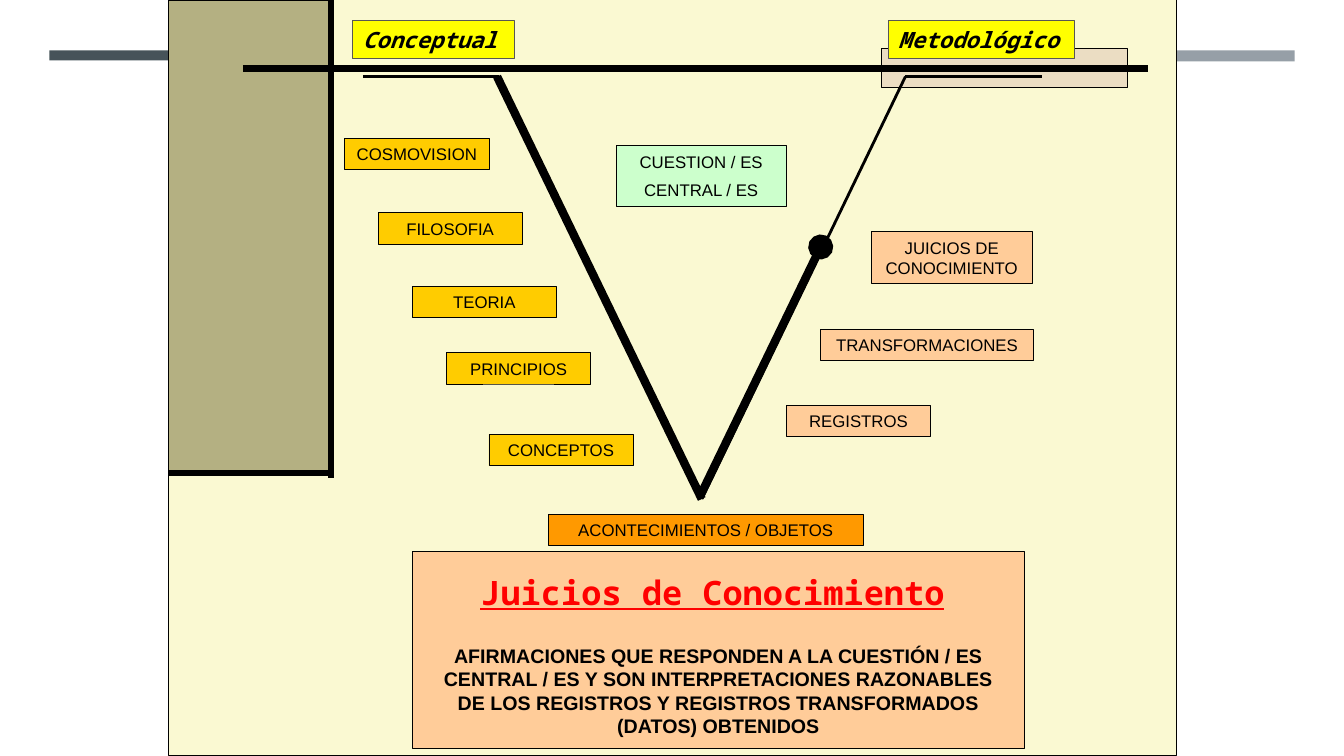
import pptx
import pptx.util
import pptx.dml.color
import pptx.enum.shapes
import pptx.enum.text
import pptx.oxml.ns
from dataclasses import dataclass
from lxml import etree

Inches = pptx.util.Inches
Pt = pptx.util.Pt
CENTER = pptx.enum.text.PP_ALIGN.CENTER
LEFT = pptx.enum.text.PP_ALIGN.LEFT
qn = pptx.oxml.ns.qn


@dataclass(frozen=True)
class Theme:
    black: str = "000000"
    slate: str = "465359"
    steel: str = "969FA7"
    cream: str = "FAF9D2"
    olive: str = "B4B082"
    sand: str = "EBDDC3"
    yellow: str = "FFFF00"
    heading_line: str = "585753"
    gold: str = "FFCC00"
    orange: str = "FF9900"
    peach: str = "FFCC99"
    mint: str = "CCFFCC"
    red: str = "FF0000"
    sans: str = "Arial"
    mono: str = "Noto Sans Mono"
    label_size: int = 12
    statement_size: int = 14
    heading_size: int = 16
    title_size: int = 24


theme = Theme()
rgb = pptx.dml.color.RGBColor.from_string

deck = pptx.Presentation()
deck.slide_width = Inches(13.33)
deck.slide_height = Inches(7.5)
slide = deck.slides.add_slide(deck.slide_layouts[6])


def add_box(left, top, width, height, fill, line=None, line_width=0.5, text="",
            size=theme.label_size, font=theme.sans, align=CENTER):
    """Add a filled rectangle; each line of text becomes a paragraph."""
    box = slide.shapes.add_shape(pptx.enum.shapes.MSO_SHAPE.RECTANGLE, Inches(left),
                                 Inches(top), Inches(width), Inches(height))
    box.shadow.inherit = False
    box.fill.solid()
    box.fill.fore_color.rgb = rgb(fill)
    if line:
        box.line.color.rgb = rgb(line)
        box.line.width = Pt(line_width)
    else:
        box.line.fill.background()
    if text:
        box.text_frame.text = text
        box.text_frame.word_wrap = True
        for index, paragraph in enumerate(box.text_frame.paragraphs):
            paragraph.alignment = align
            paragraph.space_before = Pt(size / 2 if index else 0)
            paragraph.font.size = Pt(size)
            paragraph.font.name = font
            paragraph.font.color.rgb = rgb(theme.black)
    return box


def add_line(x1, y1, x2, y2, width):
    line = slide.shapes.add_connector(pptx.enum.shapes.MSO_CONNECTOR.STRAIGHT, Inches(x1),
                                      Inches(y1), Inches(x2), Inches(y2))
    line.line.color.rgb = rgb(theme.black)
    line.line.width = Pt(width)
    etree.SubElement(line._element.spPr, qn("a:effectLst"))
    return line


# Backdrop
add_box(0.49, 0.5, 4.05, 0.1, theme.slate)
add_box(8.79, 0.5, 4.05, 0.11, theme.steel)
add_box(1.67, 0, 10, 7.5, theme.cream, theme.black, 0.75)
add_box(1.67, 0, 1.61, 4.69, theme.olive, theme.black, 0.75)
add_line(1.67, 4.69, 3.28, 4.69, 4.5)
add_box(8.74, 0.48, 2.44, 0.39, theme.sand, theme.black, 0.75)
add_line(2.41, 0.68, 11.39, 0.68, 4.5)
add_line(3.28, 4.74, 3.28, 0, 4.5)

# Headings of the two sides
for name, left, width in [("Conceptual", 3.5, 1.6), ("Metodológico", 8.81, 1.85)]:
    heading = add_box(left, 0.2, width, 0.38, theme.yellow, theme.heading_line, 0.75,
                      name, theme.heading_size, theme.mono, LEFT)
    heading_font = heading.text_frame.paragraphs[0].font
    heading_font.bold = True
    heading_font.italic = True

# Thin outline of the V
for x1, y1, x2, y2 in [(3.6, 0.76, 4.95, 0.76), (8.98, 0.76, 10.33, 0.76),
                       (4.93, 0.76, 6.96, 4.95), (8.98, 0.76, 6.96, 4.95)]:
    add_line(x1, y1, x2, y2, 2)

# Labels around the V
labels = [
    ("COSMOVISION", 3.42, 1.37, 1.43, 0.31, theme.gold),
    ("FILOSOFIA", 3.75, 2.11, 1.43, 0.31, theme.gold),
    ("TEORIA", 4.09, 2.84, 1.43, 0.31, theme.gold),
    ("PRINCIPIOS", 4.43, 3.5, 1.43, 0.31, theme.gold),
    ("CONCEPTOS", 4.85, 4.31, 1.43, 0.31, theme.gold),
    ("ACONTECIMIENTOS / OBJETOS", 5.44, 5.1, 3.12, 0.31, theme.orange),
    ("REGISTROS", 7.8, 4.02, 1.43, 0.31, theme.peach),
    ("TRANSFORMACIONES", 8.14, 3.27, 2.11, 0.31, theme.peach),
    ("JUICIOS DE CONOCIMIENTO", 8.64, 2.3, 1.6, 0.51, theme.peach),
    ("CUESTION / ES\nCENTRAL / ES", 6.11, 1.44, 1.69, 0.61, theme.mint),
]
for text, left, top, width, height, fill in labels:
    add_box(left, top, width, height, fill, theme.black, text=text)

# Definition panel
statement = add_box(
    4.09, 5.47, 6.07, 1.95, theme.peach, theme.black, size=theme.statement_size,
    text="AFIRMACIONES QUE RESPONDEN A LA CUESTIÓN / ES CENTRAL / ES Y SON "
         "INTERPRETACIONES RAZONABLES DE LOS REGISTROS Y REGISTROS "
         "TRANSFORMADOS (DATOS) OBTENIDOS").text_frame
statement.margin_left = statement.margin_right = Inches(0.22)
statement.margin_bottom = Inches(0.1)
statement.vertical_anchor = pptx.enum.text.MSO_ANCHOR.BOTTOM
statement.paragraphs[0].font.bold = True

title = slide.shapes.add_textbox(Inches(3.84), Inches(5.54), Inches(6.45),
                                 Inches(0.66)).text_frame
title.word_wrap = True
title.vertical_anchor = pptx.enum.text.MSO_ANCHOR.MIDDLE
title.text = "Juicios de Conocimiento"
title.paragraphs[0].alignment = CENTER
title_font = title.paragraphs[0].font
title_font.name = theme.mono
title_font.size = Pt(theme.title_size)
title_font.bold = True
title_font.underline = True
title_font.color.rgb = rgb(theme.red)

# Thick strokes of the V
add_line(4.93, 0.76, 6.96, 4.95, 6)
judgement_stroke = add_line(8.14, 2.45, 6.94, 4.93, 6)
etree.SubElement(judgement_stroke.line._get_or_add_ln(), qn("a:headEnd"), type="oval")

deck.save("out.pptx")
